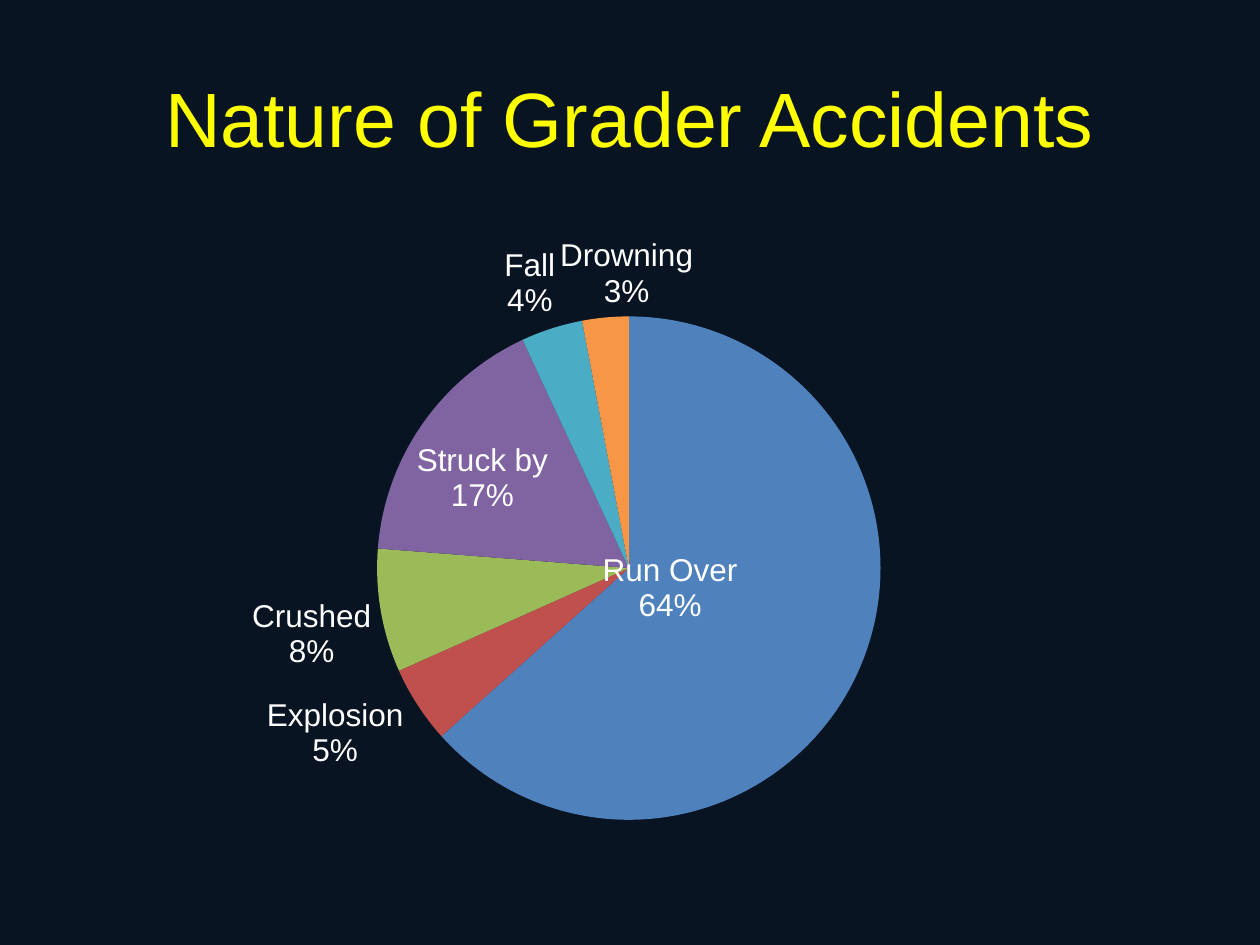
"""Build the slide on the nature of grader accidents."""
from typing import NamedTuple

from lxml import etree
from pptx import Presentation
from pptx import util as u
from pptx.chart import data as chart_data
from pptx.dml.color import RGBColor
from pptx.enum import chart as charts, text
from pptx.oxml import ns

EMU_PER_PX = 914400 / 126
FONT = "Arial"
PERCENT_FORMAT = '0"%"'
COLOURS = {
    "background": "081422",
    "title": "FFFF00",
    "label": "FFFFFF",
    "blue": "4F81BD",
    "red": "C0504D",
    "green": "9BBB59",
    "purple": "8064A2",
    "teal": "4BACC6",
    "orange": "F79646",
}


class Box(NamedTuple):
    left: int
    top: int
    width: int
    height: int


class Accident(NamedTuple):
    nature: str
    percent: int
    colour: str
    position: str = "OUTSIDE_END"
    shift: tuple[int, int] = (0, 0)


TITLE_BOX = Box(63, 38, 1134, 158)
CHART_BOX = Box(63, 220, 1134, 624)
PIE_BOX = Box(377, 316, 504, 504)
ACCIDENTS = [
    Accident("Run Over", 64, "blue", "CENTER", (-74, -32)),
    Accident("Explosion", 5, "red", shift=(-8, -12)),
    Accident("Crushed", 8, "green", shift=(-2, -14)),
    Accident("Struck by", 17, "purple", "INSIDE_END", (-11, 14)),
    Accident("Fall", 4, "teal", shift=(6, -3)),
    Accident("Drowning", 3, "orange", shift=(89, -1)),
]


def px(length: int) -> u.Emu:
    return u.Emu(round(length * EMU_PER_PX))


def colour(name: str) -> RGBColor:
    return RGBColor.from_string(COLOURS[name])


def set_font(font, size: int, colour_name: str) -> None:
    font.name = FONT
    font.size = u.Pt(size)
    font.bold = False
    font.color.rgb = colour(colour_name)


def add_text(slide, box: Box, words: str, *, size: int, colour_name: str) -> None:
    frame = slide.shapes.add_textbox(*map(px, box)).text_frame
    frame.word_wrap = True
    frame.vertical_anchor = text.MSO_ANCHOR.MIDDLE
    paragraph = frame.paragraphs[0]
    paragraph.alignment = text.PP_ALIGN.CENTER
    run = paragraph.add_run()
    run.text = words
    set_font(run.font, size, colour_name)


def make_layout(**values: object) -> etree._Element:
    layout = etree.Element(ns.qn("c:layout"))
    manual = etree.SubElement(layout, ns.qn("c:manualLayout"))
    for name, value in values.items():
        etree.SubElement(manual, ns.qn(f"c:{name}")).set("val", str(value))
    return layout


def place_pie(chart) -> None:
    plot_area = chart.plots[0]._element.getparent()
    for layout in plot_area.findall(ns.qn("c:layout")):
        plot_area.remove(layout)
    plot_area.insert(0, make_layout(
        layoutTarget="inner", xMode="edge", yMode="edge",
        x=round((PIE_BOX.left - CHART_BOX.left) / CHART_BOX.width, 3),
        y=round((PIE_BOX.top - CHART_BOX.top) / CHART_BOX.height, 3),
        w=round(PIE_BOX.width / CHART_BOX.width, 3),
        h=round(PIE_BOX.height / CHART_BOX.height, 3),
    ))


def format_slice(series, index: int, accident: Accident) -> None:
    point = series.points[index]
    point.format.fill.solid()
    point.format.fill.fore_color.rgb = colour(accident.colour)
    point.format.line.fill.background()

    label = point.data_label
    set_font(label.font, 18, "label")
    label.position = getattr(charts.XL_LABEL_POSITION, accident.position)
    element = series.data_labels._element.findall(ns.qn("c:dLbl"))[index]
    element.find(ns.qn("c:showCatName")).set("val", "1")
    etree.SubElement(element, ns.qn("c:separator")).text = "\n"
    number_format = etree.Element(ns.qn("c:numFmt"))
    number_format.set("formatCode", PERCENT_FORMAT)
    number_format.set("sourceLinked", "0")
    properties = element.find(ns.qn("c:spPr"))
    if properties is None:
        properties = element.find(ns.qn("c:txPr"))
    properties.addprevious(number_format)
    x, y = accident.shift
    element.insert(1, make_layout(
        x=round(x / CHART_BOX.width, 3), y=round(y / CHART_BOX.height, 3)))


def add_pie(slide, accidents: list[Accident]) -> None:
    data = chart_data.CategoryChartData(number_format=PERCENT_FORMAT)
    data.categories = [accident.nature for accident in accidents]
    data.add_series("Series 1", [accident.percent for accident in accidents])
    chart = slide.shapes.add_chart(
        charts.XL_CHART_TYPE.PIE, *map(px, CHART_BOX), data).chart
    chart.has_title = False
    chart.has_legend = False
    set_font(chart.font, 18, "label")
    chart.plots[0].vary_by_categories = True
    place_pie(chart)

    series = chart.plots[0].series[0]
    labels = series.data_labels
    labels.show_value = True
    labels.show_category_name = True
    labels.number_format = PERCENT_FORMAT
    labels.number_format_is_linked = False
    for leader_lines in labels._element.findall(ns.qn("c:showLeaderLines")):
        leader_lines.set("val", "0")
    for index, accident in enumerate(accidents):
        format_slice(series, index, accident)


def main() -> None:
    presentation = Presentation()
    presentation.slide_width = px(1260)
    presentation.slide_height = px(945)
    slide = presentation.slides.add_slide(presentation.slide_layouts[6])
    slide.background.fill.solid()
    slide.background.fill.fore_color.rgb = colour("background")
    add_text(slide, TITLE_BOX, "Nature of Grader Accidents", size=44, colour_name="title")
    add_pie(slide, ACCIDENTS)
    presentation.save("out.pptx")


if __name__ == "__main__":
    main()
